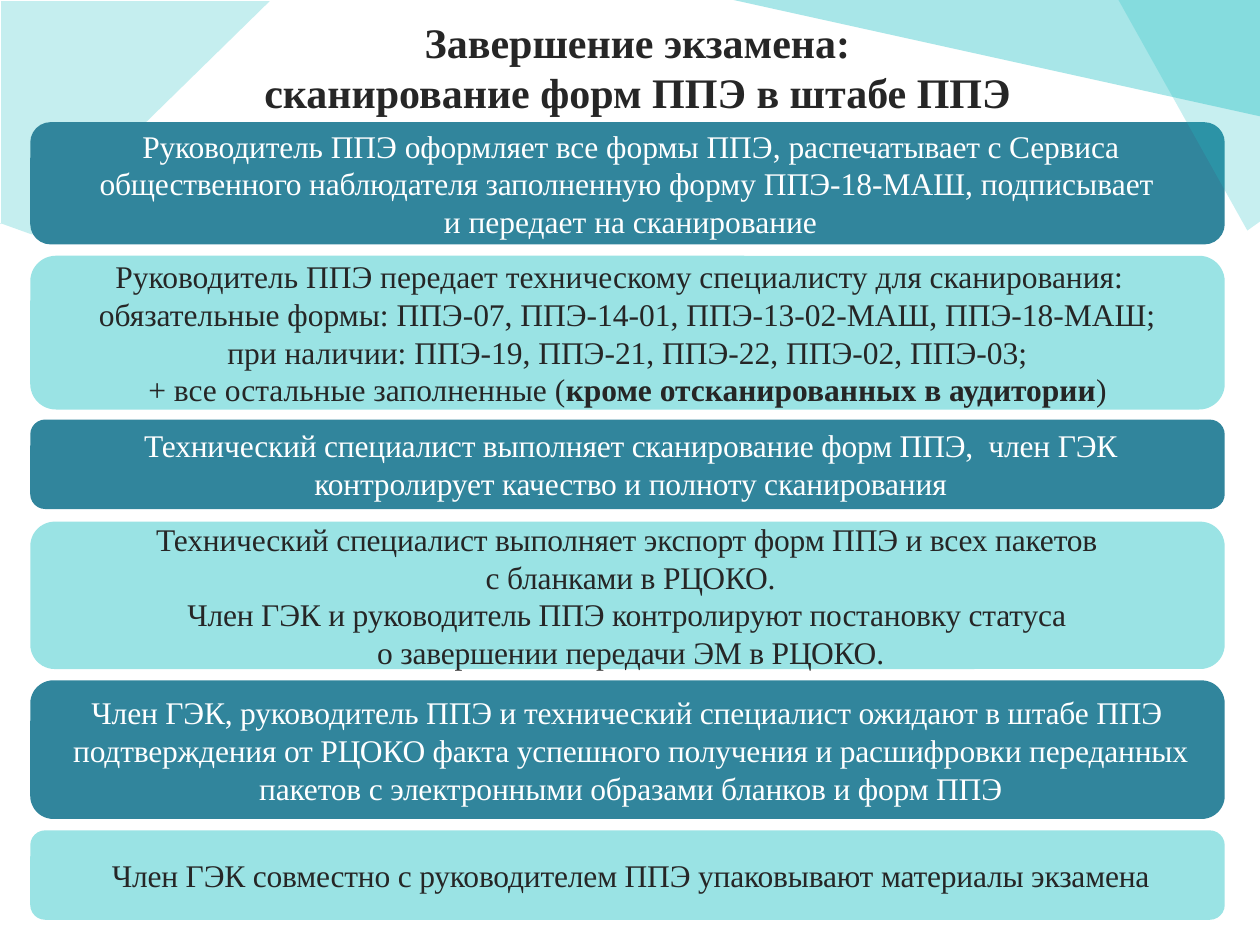
from typing import NamedTuple

from lxml.etree import SubElement
from pptx import Presentation
from pptx.dml.color import RGBColor
from pptx.enum.shapes import MSO_SHAPE
from pptx.enum.text import MSO_ANCHOR, PP_ALIGN
from pptx.oxml.ns import qn
from pptx.util import Inches, Pt

WHITE = RGBColor(0xFF, 0xFF, 0xFF)
INK = RGBColor(0x26, 0x26, 0x26)
TEAL = RGBColor(0x31, 0x85, 0x9C)
MINT = RGBColor(0x9A, 0xE3, 0xE4)
AQUA = RGBColor(0x20, 0xC0, 0xC4)
FONT = "Times New Roman"

# Grid of 100 columns by 75 rows
prs = Presentation()
prs.slide_width, prs.slide_height = Inches(10), Inches(7.5)
COL, ROW = prs.slide_width / 100, prs.slide_height / 75
LEFT, WIDTH = 2.4, 94.8
TIGHT = -10  # letter spacing, hundredths of a point


class Piece(NamedTuple):
    text: str
    spacing: int = 0
    bold: bool = False


class Step(NamedTuple):
    top: float
    height: float
    paragraphs: list[list[Piece]]
    indent: float = 0.5


class Facet(NamedTuple):
    points: list[tuple[float, float]]
    opacity: int


LEFT_FACET = Facet([(0, 17.7), (2.5, 18.6), (21.4, 0.1), (0.1, 0.1), (0.1, 17.8)], 26)
RIGHT_FACETS = [
    Facet([(57.3, -0.2), (100.3, 9.3), (100.3, -0.3)], 39),
    Facet([(100.4, 17.3), (99, 18.3), (88.6, -0.3), (100.3, -0.3), (100.3, 17.5)], 25),
]

STEPS = [
    Step(9.7, 9.7, [[
        Piece("Руководитель ", TIGHT), Piece("ППЭ "), Piece("оформляет все ", TIGHT),
        Piece("формы ППЭ, "),
        Piece("распечатывает с Сервиса общественного наблюдателя заполненную ", TIGHT),
        Piece("форму ППЭ-18-МАШ, подписывает \nи передает на сканирование")]]),
    Step(20.3, 12.2, [
        [Piece("Руководитель ППЭ передает техническому специалисту для сканирования:  \n"
               "обязательные формы: ППЭ-07, ППЭ-14-01, ППЭ-13-02-МАШ, ППЭ-18-МАШ;")],
        [Piece("при наличии: ППЭ-19, ППЭ-21, ППЭ-22, ППЭ-02, ППЭ-03;")],
        [Piece("+ все остальные заполненные ("),
         Piece("кроме отсканированных в аудитории", bold=True), Piece(")")]], indent=0),
    Step(33.3, 7.1, [[Piece(
        "Технический специалист выполняет сканирование форм ППЭ,  член ГЭК "
        "контролирует качество и полноту сканирования", TIGHT)]]),
    Step(41.4, 11.7, [
        [Piece("Технический специалист выполняет экспорт форм ППЭ и всех пакетов \n"
               "с бланками в РЦОКО.", TIGHT)],
        [Piece("Член ГЭК и руководитель ППЭ контролируют постановку статуса \n"
               "о завершении передачи ЭМ в РЦОКО.", TIGHT)]]),
    Step(54, 11, [[Piece(
        "Член ГЭК, руководитель ППЭ и технический специалист ожидают в штабе ППЭ  "
        "подтверждения от РЦОКО факта успешного получения и расшифровки переданных "
        "пакетов с электронными образами бланков и форм ППЭ", TIGHT)]]),
    Step(65.9, 7.1, [[Piece(
        "Член ГЭК совместно с руководителем ППЭ упаковывают материалы экзамена", TIGHT)]]),
]


def place(sp, left: float, top: float, width: float, height: float) -> None:
    sp.left, sp.top = round(left * COL), round(top * ROW)
    sp.width, sp.height = round(width * COL), round(height * ROW)


def paint(sp, color: RGBColor) -> None:
    sp.shadow.inherit = False
    sp.fill.solid()
    sp.fill.fore_color.rgb = color
    sp.line.fill.background()


def add_piece(p, piece: Piece, size: int, color: RGBColor) -> None:
    fmt = {"name": FONT, "size": Pt(size), "bold": piece.bold}
    for i, line in enumerate(piece.text.split("\n")):
        if i:
            p.add_line_break()
        if not line:
            continue
        r = p.add_run()
        r.text = line
        for key, value in fmt.items():
            setattr(r.font, key, value)
        r.font.color.rgb = color
        if piece.spacing:
            r.font._element.set("spc", str(piece.spacing))


def add_facet(s, facet: Facet):
    points = [(x * COL, y * ROW) for x, y in facet.points]
    builder = s.shapes.build_freeform(*points[0])
    builder.add_line_segments(points[1:], close=True)
    sp = builder.convert_to_shape()
    paint(sp, AQUA)
    clr = sp._element.spPr.find(qn("a:solidFill"))[0]
    SubElement(clr, qn("a:alpha"), val=str(facet.opacity * 1000))
    return sp


def add_step(s, step: Step, fill: RGBColor, color: RGBColor) -> None:
    sp = s.shapes.add_shape(MSO_SHAPE.ROUNDED_RECTANGLE, 0, 0, 0, 0)
    place(sp, LEFT, step.top, WIDTH, step.height)
    paint(sp, fill)
    tf = sp.text_frame
    fmt = {"word_wrap": True, "vertical_anchor": MSO_ANCHOR.MIDDLE,
           "margin_left": Inches(0.15), "margin_right": Inches(0.15)}
    for key, value in fmt.items():
        setattr(tf, key, value)
    for i, pieces in enumerate(step.paragraphs):
        p = tf.add_paragraph() if i else tf.paragraphs[0]
        p.alignment = PP_ALIGN.CENTER
        p._p.get_or_add_pPr().set("marL", str(round(step.indent * COL)))
        for piece in pieces:
            add_piece(p, piece, 18, color)


def main() -> None:
    s = prs.slides.add_slide(prs.slide_layouts[0])
    subtitle = s.placeholders[1]._element
    subtitle.getparent().remove(subtitle)

    # Left facet lies behind the title
    facet = add_facet(s, LEFT_FACET)
    s.shapes._spTree.insert(2, facet._element)

    # Title
    title = s.shapes.title
    place(title, 1.6, 0.5, 98, 9.6)
    title.text_frame.vertical_anchor = MSO_ANCHOR.MIDDLE
    p = title.text_frame.paragraphs[0]
    p.alignment = PP_ALIGN.CENTER
    add_piece(p, Piece("Завершение экзамена:\nсканирование форм ППЭ в штабе ППЭ", bold=True),
              24, INK)

    # Steps in alternating colours
    for i, step in enumerate(STEPS):
        add_step(s, step, *((MINT, INK) if i % 2 else (TEAL, WHITE)))

    # Right facets overlay the first step
    for facet in RIGHT_FACETS:
        add_facet(s, facet)

    prs.save("out.pptx")


if __name__ == "__main__":
    main()
